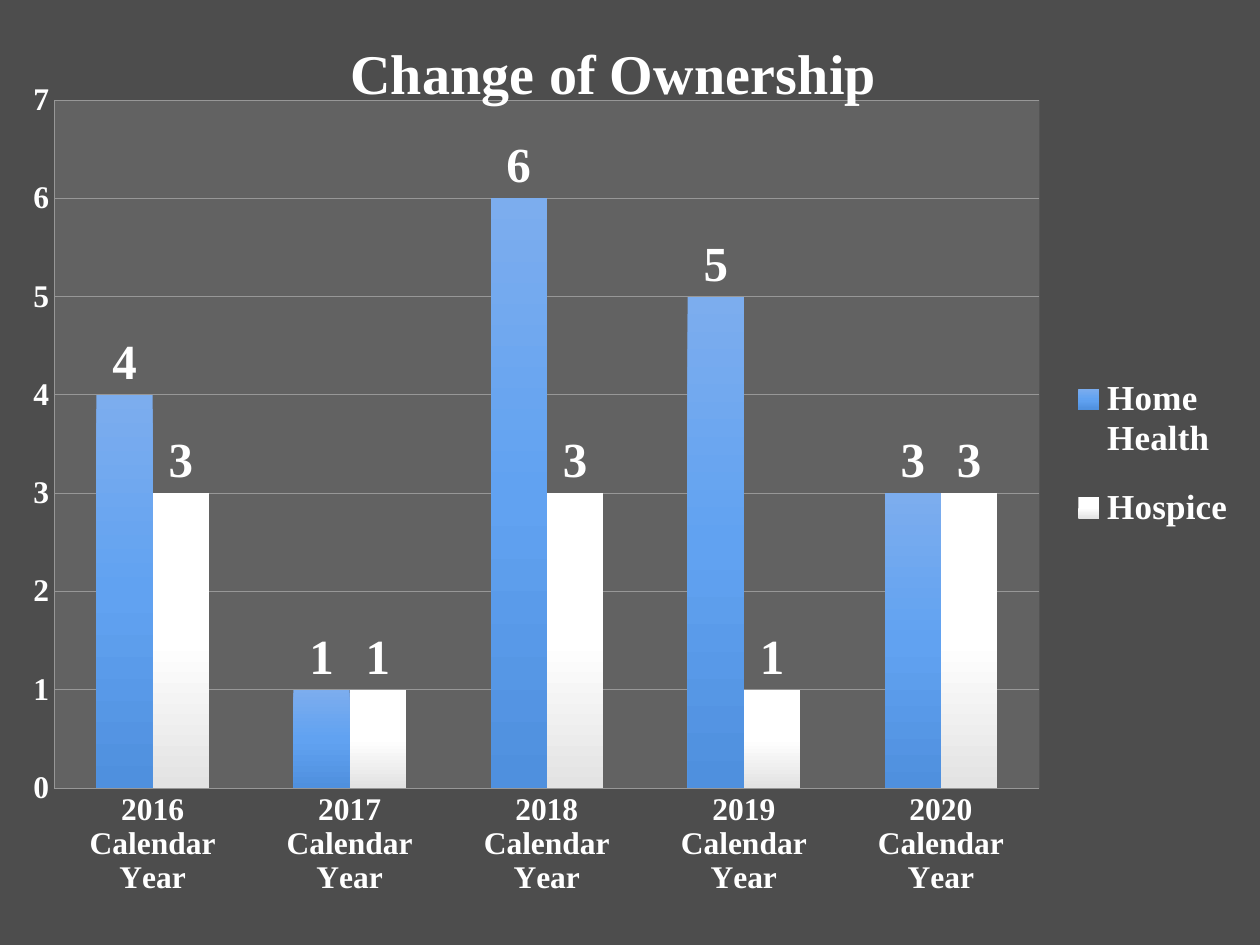
from lxml.etree import SubElement
from pptx import Presentation
from pptx.chart.data import CategoryChartData
from pptx.dml.color import RGBColor
from pptx.enum.chart import XL_CHART_TYPE, XL_LABEL_POSITION, XL_LEGEND_POSITION, XL_TICK_MARK
from pptx.oxml import parse_xml
from pptx.oxml.ns import nsdecls, qn
from pptx.util import Inches, Pt

COLORS = {"back": "4D4D4D", "plot": "626262", "line": "979797", "text": "FFFFFF"}
FONT = "Times New Roman"
SERIES = {
    "Home Health": ((4, 1, 6, 5, 3), ("7CADEE", "61A2F1", "4F90DE")),
    "Hospice": ((3, 1, 3, 1, 3), ("FFFFFF", "FFFFFF", "E3E3E3")),
}


def style_font(font, size):
    """Set the bold white lettering shared by all chart text."""
    font.name, font.size, font.bold = FONT, Pt(size), True
    font.color.rgb = RGBColor.from_string(COLORS["text"])


def style_line(line):
    """Set a thin grey rule."""
    line.width = Pt(0.5)
    line.color.rgb = RGBColor.from_string(COLORS["line"])


def area_fill(color):
    """Return chart shape properties with a solid fill and no outline."""
    return parse_xml(
        f'<c:spPr {nsdecls("c", "a")}><a:solidFill><a:srgbClr val="{color}"/>'
        "</a:solidFill><a:ln><a:noFill/></a:ln></c:spPr>"
    )


def gradient_fill(colors):
    """Return a vertical gradient with evenly spaced stops."""
    step = 100000 // (len(colors) - 1)
    stops = "".join(
        f'<a:gs pos="{i * step}"><a:srgbClr val="{c}"/></a:gs>' for i, c in enumerate(colors)
    )
    return parse_xml(
        f'<a:gradFill {nsdecls("a")} rotWithShape="1"><a:gsLst>{stops}</a:gsLst>'
        '<a:lin ang="5400000" scaled="0"/></a:gradFill>'
    )


def place(element, index, inner=False, **shares):
    """Place a chart part by shares of the chart's size."""
    for old in element.findall(qn("c:layout")):
        element.remove(old)
    layout = parse_xml(f'<c:layout {nsdecls("c")}><c:manualLayout/></c:layout>')
    manual = layout[0]
    if inner:
        SubElement(manual, qn("c:layoutTarget"), val="inner")
    for key in "xy":
        SubElement(manual, qn(f"c:{key}Mode"), val="edge")
    for key, share in shares.items():
        SubElement(manual, qn(f"c:{key}"), val=str(share))
    element.insert(index, layout)


def style_axis(axis):
    """Set labels and line of an axis without tick marks."""
    axis.major_tick_mark = axis.minor_tick_mark = XL_TICK_MARK.NONE
    style_font(axis.tick_labels.font, 18)
    style_line(axis.format.line)


def add_title(chart, text):
    """Add the chart title over the plot."""
    tf = chart.chart_title.text_frame
    r = tf.paragraphs[0].add_run()
    r.text = text
    style_font(r.font, 32)
    chart.chart_title.include_in_layout = False
    place(chart.chart_title._element, 1, x=0.27, y=0.03)


def add_legend(chart):
    """Add the legend on the right."""
    chart.has_legend = True
    chart.legend.position = XL_LEGEND_POSITION.RIGHT
    chart.legend.include_in_layout = False
    style_font(chart.legend.font, 20)
    place(chart.legend._element, 1, x=0.84, y=0.37, w=0.15, h=0.22)


def style_series(series):
    """Set the gradient and value labels of a series."""
    series.format.fill.background()
    sppr = series._element.find(qn("c:spPr"))
    sppr.replace(sppr[0], gradient_fill(SERIES[series.name][1]))
    series.invert_if_negative = False
    labels = series.data_labels
    labels.show_value = True
    labels.position = XL_LABEL_POSITION.OUTSIDE_END
    style_font(labels.font, 28)


def add_ownership_chart(s, width, height):
    """Add the clustered columns over the whole slide."""
    data = CategoryChartData()
    data.categories = [f"{year}\nCalendar\nYear" for year in range(2016, 2021)]
    for name, (values, _) in SERIES.items():
        data.add_series(name, values)
    chart = s.shapes.add_chart(XL_CHART_TYPE.COLUMN_CLUSTERED, 0, 0, width, height, data).chart
    style_font(chart.font, 18)
    add_title(chart, "Change of Ownership")
    add_legend(chart)
    for axis in (chart.category_axis, chart.value_axis):
        style_axis(axis)
    axis = chart.value_axis
    axis.minimum_scale, axis.maximum_scale, axis.major_unit = 0, 7, 1
    style_line(axis.major_gridlines.format.line)
    plot = chart.plots[0]
    plot.gap_width, plot.overlap, plot.vary_by_categories = 150, 0, False
    for series in plot.series:
        style_series(series)
    frame = chart._chartSpace.find(qn("c:chart"))
    area = frame.find(qn("c:plotArea"))
    place(area, 0, inner=True, x=0.043, y=0.106, w=0.782, h=0.728)
    area.append(area_fill(COLORS["plot"]))
    frame.addnext(area_fill(COLORS["back"]))


def main():
    """Build and save the slide."""
    prs = Presentation()
    prs.slide_width, prs.slide_height = Inches(10), Inches(7.5)
    s = prs.slides.add_slide(prs.slide_layouts[6])
    add_ownership_chart(s, prs.slide_width, prs.slide_height)
    prs.save("out.pptx")


if __name__ == "__main__":
    main()
